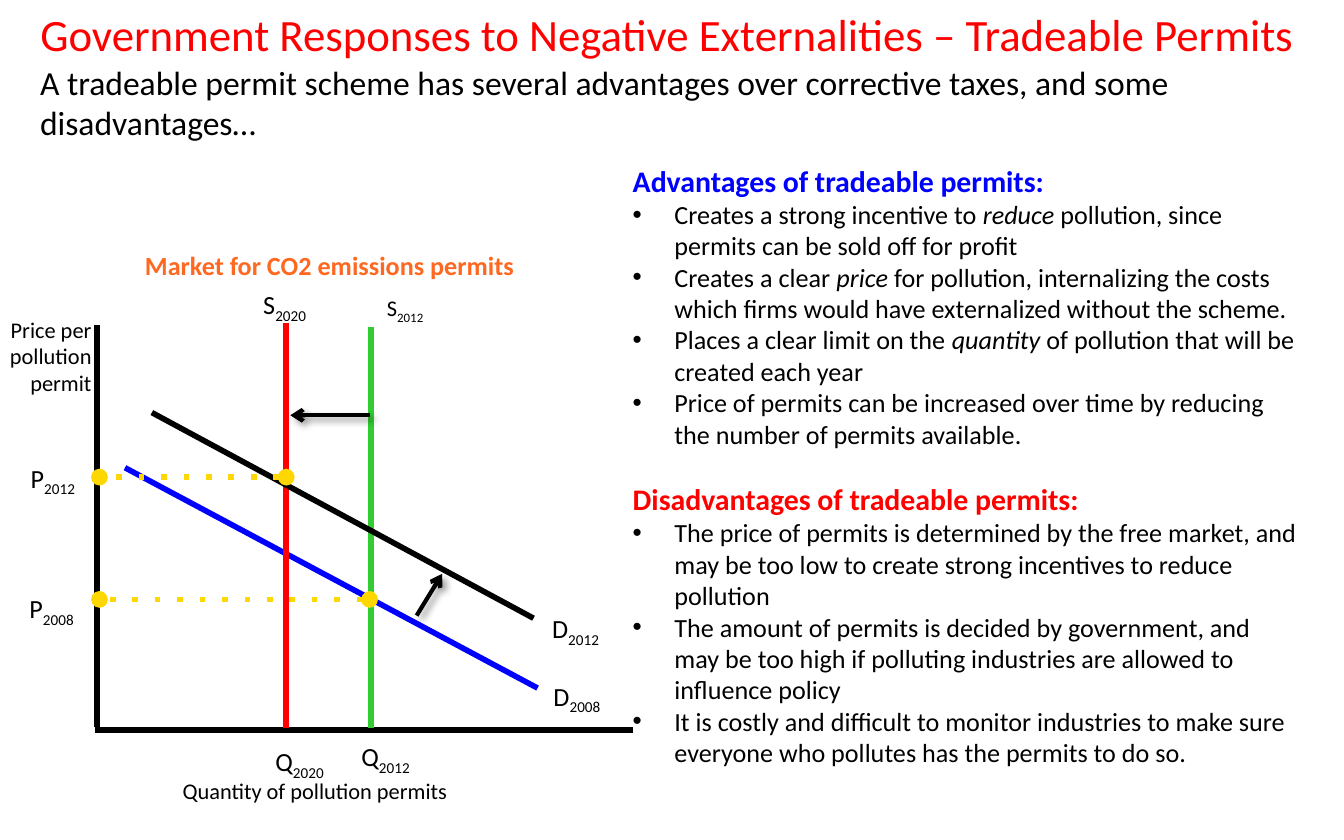
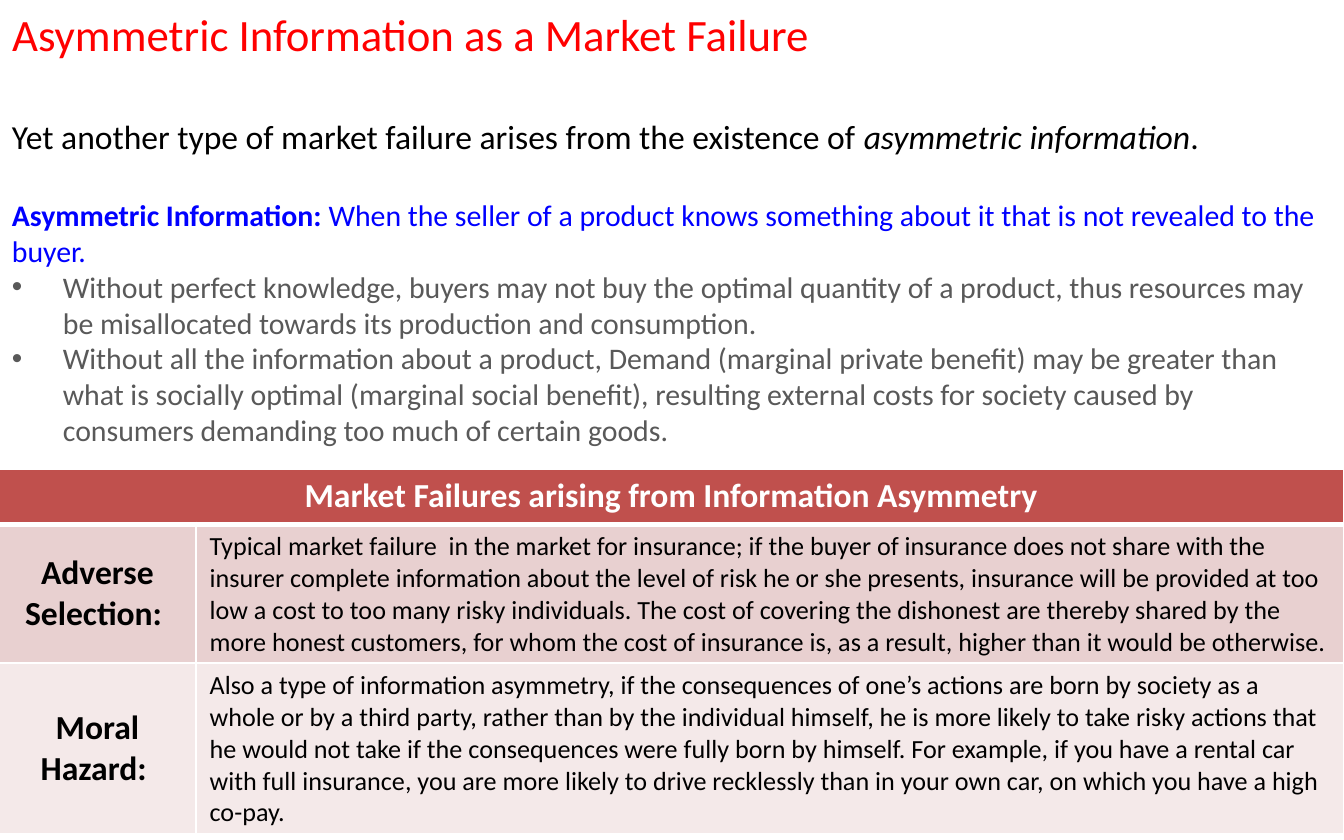
from lxml import etree
from pptx import Presentation
from pptx.dml.color import RGBColor
from pptx.enum.dml import MSO_LINE
from pptx.enum.shapes import MSO_CONNECTOR
from pptx.enum.text import MSO_ANCHOR, MSO_AUTO_SIZE, PP_ALIGN
from pptx.oxml import parse_xml
from pptx.oxml.ns import nsdecls, qn
from pptx.util import Inches, Pt

FONT = "Calibri"
BLACK = RGBColor(0x00, 0x00, 0x00)
WHITE = RGBColor(0xFF, 0xFF, 0xFF)
RED = RGBColor(0xFF, 0x00, 0x00)
BLUE = RGBColor(0x00, 0x00, 0xFF)
GREEN = RGBColor(0x32, 0xCD, 0x32)
GOLD = RGBColor(0xFF, 0xD7, 0x00)
ORANGE = RGBColor(0xFF, 0x68, 0x20)
GRAY = RGBColor(0x59, 0x59, 0x59)
BRICK = RGBColor(0xC0, 0x50, 0x4D)
ROSE = RGBColor(0xE8, 0xD0, 0xD0)
PALE = RGBColor(0xF4, 0xE9, 0xE9)

SHADOW = (f'<a:effectLst {nsdecls("a")}><a:outerShdw blurRad="50800" dist="38100" '
          'dir="2700000"><a:srgbClr val="000000"><a:alpha val="40000"/></a:srgbClr>'
          '</a:outerShdw></a:effectLst>')
NO_SHADOW = f'<a:effectLst {nsdecls("a")}/>'


def write(tf, text, size=14, color=BLACK, bold=False, mark="italic",
          align=PP_ALIGN.LEFT, indent=0, before=0, after=0):
    """Add a paragraph; parts between asterisks get the marked style."""
    tf.word_wrap = True
    p = tf.paragraphs[0]
    if p.runs:
        p = tf.add_paragraph()
    p.alignment = align
    p.space_before, p.space_after = Pt(before), Pt(after)
    if indent:
        pPr = p._p.get_or_add_pPr()
        pPr.set("marL", str(Inches(indent)))
        pPr.set("indent", str(-Inches(indent)))
        etree.SubElement(pPr, qn("a:buFont")).set("typeface", "Arial")
        etree.SubElement(pPr, qn("a:buChar")).set("char", "•")
    for i, part in enumerate(text.split("*")):
        if not part:
            continue
        marked = i % 2 == 1
        r = p.add_run()
        r.text = part
        r.font.name, r.font.size = FONT, Pt(size)
        r.font.color.rgb = color
        r.font.bold = bold or (marked and mark == "bold")
        r.font.italic = marked and mark == "italic"
        if marked and mark == "sub":
            r.font._element.set("baseline", "-25000")


def add_box(shapes, left, top, width, height):
    sp = shapes.add_textbox(Inches(left), Inches(top), Inches(width), Inches(height))
    sp.text_frame.auto_size = MSO_AUTO_SIZE.SHAPE_TO_FIT_TEXT
    return sp.text_frame


prs = Presentation()
prs.slide_width, prs.slide_height = Inches(10), Inches(6.25)

# Slides with their titles
slides = []
for title, left in [
    ("Government Responses to Negative Externalities – Tradeable Permits", 0.2),
    ("Asymmetric Information as a Market Failure", -0.01),
]:
    s = prs.slides.add_slide(prs.slide_layouts[5])
    sp = s.shapes.title
    sp.left, sp.top = Inches(left), Inches(0)
    sp.width, sp.height = Inches(10), Inches(0.5)
    sp.text_frame.auto_size = MSO_AUTO_SIZE.NONE
    sp.text_frame.vertical_anchor = MSO_ANCHOR.TOP
    write(sp.text_frame, title, size=24, color=RED)
    slides.append(s)
permits, asymmetry = slides

# Slide 1: introduction
write(add_box(permits.shapes, 0.2, 0.41, 10, 0.7),
      "A tradeable permit scheme has several advantages over corrective taxes, "
      "and some disadvantages…", size=18)

# Slide 1: axes, curves, price levels and shift arrows
diagram = permits.shapes.add_group_shape().shapes
for x1, y1, x2, y2, color, kind in [
    (0.72, 2.42, 0.72, 5.41, BLACK, "solid"),
    (0.71, 5.43, 4.71, 5.43, BLACK, "solid"),
    (2.76, 2.43, 2.76, 5.42, GREEN, "solid"),
    (0.93, 3.48, 4, 5.12, BLUE, "solid"),
    (2.75, 4.46, 0.74, 4.46, GOLD, "price"),
    (2.13, 2.4, 2.13, 5.42, RED, "solid"),
    (1.13, 3.07, 3.97, 4.6, BLACK, "solid"),
    (2.13, 3.55, 0.74, 3.55, GOLD, "price"),
    (2.75, 3.09, 2.16, 3.09, BLACK, "shift"),
    (3.1, 4.58, 3.29, 4.27, BLACK, "shift"),
]:
    cn = diagram.add_connector(MSO_CONNECTOR.STRAIGHT, Inches(x1), Inches(y1),
                               Inches(x2), Inches(y2))
    cn.line.color.rgb = color
    cn.line.width = Pt(2.25 if kind == "shift" else 3)
    ln = cn.line._get_or_add_ln()
    if kind == "price":
        cn.line.dash_style = MSO_LINE.ROUND_DOT
        ln.find(qn("a:prstDash")).set("val", "dot")
        etree.SubElement(ln, qn("a:headEnd")).set("type", "oval")
        etree.SubElement(ln, qn("a:tailEnd")).set("type", "oval")
    elif kind == "shift":
        etree.SubElement(ln, qn("a:tailEnd")).set("type", "arrow")
    cn._element.spPr.append(parse_xml(SHADOW if kind == "shift" else NO_SHADOW))

# Slide 1: diagram labels
for text, left, top, width, size in [
    ("Q*2012", 2.59, 5.46, 0.84, 14),
    ("S*2012", 2.78, 2.14, 2.24, 12),
    ("D*2008", 4.02, 5.01, 0.87, 14),
    ("P*2008", 0.12, 4.36, 0.82, 14),
    ("S*2020", 1.86, 2.1, 0.82, 14),
    ("D*2012", 4.01, 4.51, 0.87, 14),
    ("P*2012", 0.13, 3.39, 0.82, 14),
    ("Q*2020", 1.95, 5.5, 0.82, 14),
    ("Quantity of pollution permits", 1.26, 5.73, 3.18, 12),
]:
    write(add_box(diagram, left, top, width, 0.34 if size == 14 else 0.31),
          text, size=size, mark="sub")
write(add_box(diagram, -0.35, 2.3, 1.13, 0.72), "Price per pollution permit",
      size=12, align=PP_ALIGN.RIGHT)
write(add_box(diagram, 0.98, 1.81, 3.48, 0.34), "Market for CO2 emissions permits",
      color=ORANGE, bold=True)

# Slide 1: advantages and disadvantages
tf = add_box(permits.shapes, 4.61, 1.16, 5.17, 4.64)
for heading, color, before, points in [
    ("Advantages of tradeable permits:", BLUE, 0, [
        "Creates a strong incentive to *reduce* pollution, since permits can be sold off "
        "for profit",
        "Creates a clear *price* for pollution, internalizing the costs which firms would "
        "have externalized without the scheme.",
        "Places a clear limit on the *quantity* of pollution that will be created each year",
        "Price of permits can be increased over time by reducing the number of permits "
        "available.",
    ]),
    ("Disadvantages of tradeable permits:", RED, 17, [
        "The price of permits is determined by the free market, and may be too low to "
        "create strong incentives to reduce pollution",
        "The amount of permits is decided by government, and may be too high if polluting "
        "industries are allowed to influence policy",
        "It is costly and difficult to monitor industries to make sure everyone who "
        "pollutes has the permits to do so.",
    ]),
]:
    write(tf, heading, size=16, color=color, bold=True, before=before)
    for point in points:
        write(tf, point, indent=0.31)

# Slide 2: definition
tf = add_box(asymmetry.shapes, -0.01, 0.81, 10.01, 2.59)
write(tf, "Yet another type of market failure arises from the existence of "
      "*asymmetric information*.", size=18, after=22)
write(tf, "*Asymmetric Information: *When the seller of a product knows something about it "
      "that is not revealed to the buyer.", size=16, color=BLUE, mark="bold")
for point in [
    "Without perfect knowledge, buyers may not buy the optimal quantity of a product, thus "
    "resources may be misallocated towards its production and consumption.",
    "Without all the information about a product, Demand (marginal private benefit) may be "
    "greater than what is socially optimal (marginal social benefit), resulting external "
    "costs for society caused by consumers demanding too much of certain goods.",
]:
    write(tf, point, size=16, color=GRAY, indent=0.38)

# Slide 2: table of market failures
rows = [
    (0.41, BRICK, ["Market Failures arising from Information Asymmetry", ""]),
    (0.94, ROSE, [
        "Adverse Selection: ",
        "Typical market failure  in the market for insurance; if the buyer of insurance does "
        "not share with the insurer complete information about the level of risk he or she "
        "presents, insurance will be provided at too low a cost to too many risky "
        "individuals. The cost of covering the dishonest are thereby shared by the more "
        "honest customers, for whom the cost of insurance is, as a result, higher than it "
        "would be otherwise."]),
    (1.05, PALE, [
        "Moral Hazard: ",
        "Also a type of information asymmetry, if the consequences of one’s actions are born "
        "by society as a whole or by a third party, rather than by the individual himself, "
        "he is more likely to take risky actions that he would not take if the consequences "
        "were fully born by himself. For example, if you have a rental car with full "
        "insurance, you are more likely to drive recklessly than in your own car, on which "
        "you have a high co-pay."]),
]
frame = asymmetry.shapes.add_table(3, 2, Inches(-0.01), Inches(3.49),
                                   Inches(10.01), Inches(2.71))
table = frame.table
for column, width in zip(table.columns, (1.47, 8.54)):
    column.width = Inches(width)
table.cell(0, 0).merge(table.cell(0, 1))
for i, (height, fill, texts) in enumerate(rows):
    table.rows[i].height = Inches(height)
    for j, text in enumerate(texts):
        cell = table.cell(i, j)
        tcPr = cell._tc.get_or_add_tcPr()
        for side in "LRTB":
            thick = (i, side) in [(0, "B"), (1, "T")]
            tcPr.append(parse_xml(
                f'<a:ln{side} {nsdecls("a")} w="{Pt(3 if thick else 1)}"><a:solidFill>'
                f'<a:srgbClr val="{WHITE}"/></a:solidFill></a:ln{side}>'))
        cell.fill.solid()
        cell.fill.fore_color.rgb = fill
        cell.vertical_anchor = MSO_ANCHOR.MIDDLE if i else MSO_ANCHOR.TOP
        if text:
            write(cell.text_frame, text, size=14 if j else 18,
                  color=BLACK if i else WHITE, bold=j == 0,
                  align=PP_ALIGN.LEFT if j else PP_ALIGN.CENTER)
frame.height = Inches(2.71)

prs.save("out.pptx")
